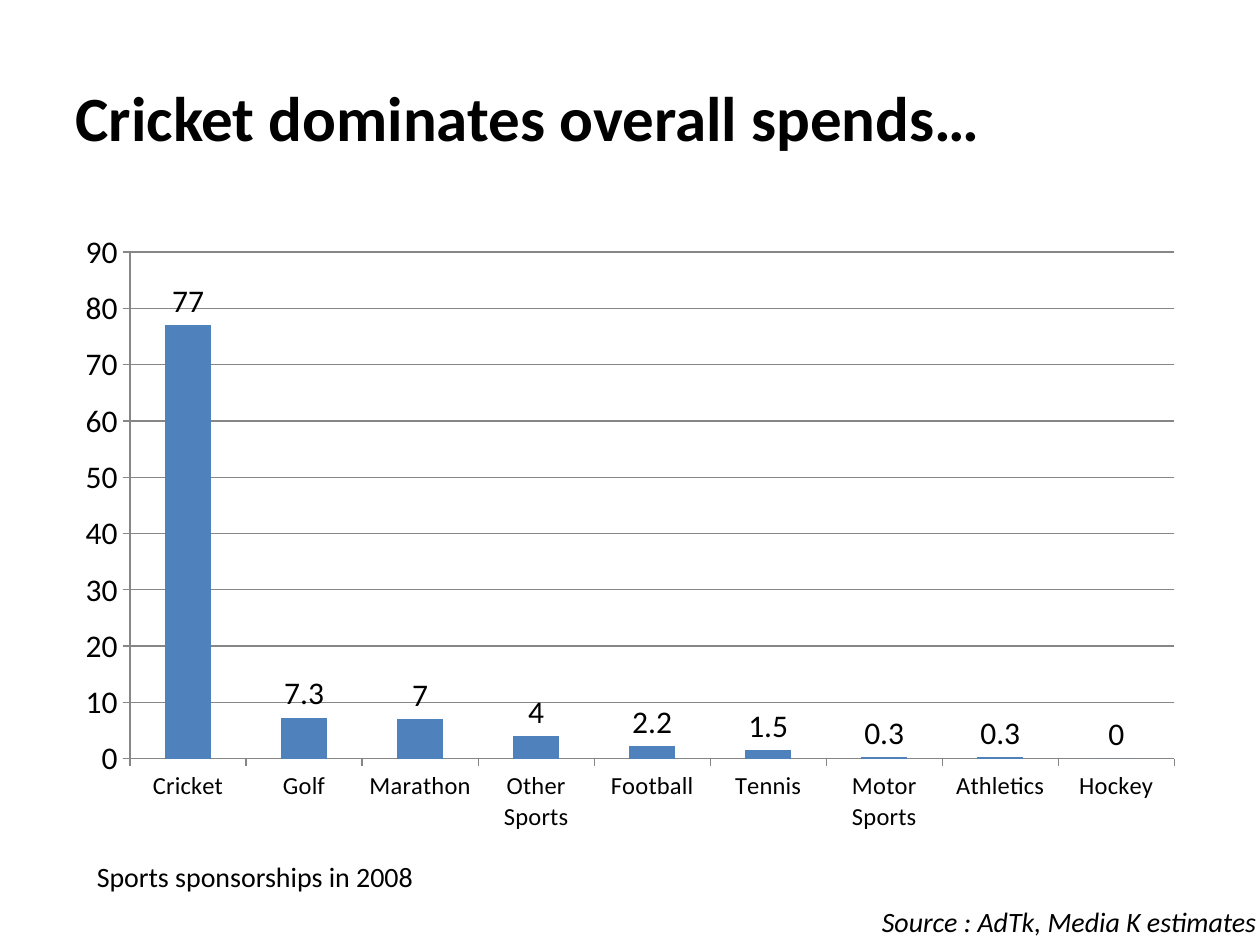
from dataclasses import dataclass

from pptx import Presentation
from pptx.chart.data import CategoryChartData
from pptx.dml.color import RGBColor
from pptx.enum.chart import XL_CHART_TYPE as ChartType
from pptx.enum.chart import XL_LABEL_POSITION as LabelPosition
from pptx.enum.chart import XL_TICK_MARK as TickMark
from pptx.enum.text import MSO_ANCHOR as Anchor
from pptx.enum.text import PP_ALIGN as Align
from pptx.shapes.base import BaseShape
from pptx.slide import Slide
from pptx.util import Inches, Pt


@dataclass(frozen=True)
class Theme:
    font: str = "Calibri"
    ink: RGBColor = RGBColor(0x00, 0x00, 0x00)
    bar: RGBColor = RGBColor(0x4F, 0x81, 0xBD)
    rule: RGBColor = RGBColor(0x86, 0x86, 0x86)
    title_size: Pt = Pt(36)
    chart_size: Pt = Pt(18)
    category_size: Pt = Pt(14)
    note_size: Pt = Pt(16)


@dataclass(frozen=True)
class Area:
    left: float
    top: float
    width: float
    height: float

    def lengths(self) -> tuple[Inches, ...]:
        return tuple(map(Inches, (self.left, self.top, self.width, self.height)))


@dataclass(frozen=True)
class Caption:
    text: str
    area: Area
    size: Pt
    align: Align = Align.LEFT
    anchor: Anchor = Anchor.MIDDLE
    bold: bool = False
    italic: bool = False


@dataclass(frozen=True)
class Spend:
    sport: str
    share: float


THEME = Theme()
CHART_AREA = Area(0.5, 1.75, 9, 4.95)
TITLE = Caption("Cricket dominates overall spends…", Area(0.5, 0.3, 9, 1.25),
                THEME.title_size, bold=True)
NOTES = [
    Caption("Sports sponsorships in 2008", Area(0.67, 6.33, 9, 1.25), THEME.note_size),
    Caption("Source : AdTk, Media K estimates", Area(6.07, 7.13, 4, 0.37),
            THEME.note_size, align=Align.RIGHT, anchor=Anchor.TOP, italic=True),
]
SPENDS = [
    Spend("Cricket", 77),
    Spend("Golf", 7.3),
    Spend("Marathon", 7),
    Spend("Other Sports", 4),
    Spend("Football", 2.2),
    Spend("Tennis", 1.5),
    Spend("Motor Sports", 0.3),
    Spend("Athletics", 0.3),
    Spend("Hockey", 0),
]


def write_caption(box: BaseShape, caption: Caption) -> None:
    box.left, box.top, box.width, box.height = caption.area.lengths()
    frame = box.text_frame
    frame.word_wrap = True
    frame.vertical_anchor = caption.anchor
    para = frame.paragraphs[0]
    para.text = caption.text
    para.alignment = caption.align
    font = para.font
    font.name = THEME.font
    font.size = caption.size
    font.bold = caption.bold
    font.italic = caption.italic
    font.color.rgb = THEME.ink


def add_spend_chart(page: Slide, spends: list[Spend]) -> None:
    data = CategoryChartData()
    data.categories = [spend.sport for spend in spends]
    data.add_series("Series 1", [spend.share for spend in spends])
    chart = page.shapes.add_chart(
        ChartType.COLUMN_CLUSTERED, *CHART_AREA.lengths(), data).chart
    chart.has_title = False
    chart.has_legend = False
    chart.font.name = THEME.font
    chart.font.size = THEME.chart_size
    chart.font.color.rgb = THEME.ink

    plot = chart.plots[0]
    plot.gap_width = 150
    plot.vary_by_categories = False
    fill = plot.series[0].format.fill
    fill.solid()
    fill.fore_color.rgb = THEME.bar
    plot.has_data_labels = True
    plot.data_labels.show_value = True
    plot.data_labels.position = LabelPosition.OUTSIDE_END

    values, sports = chart.value_axis, chart.category_axis
    values.minimum_scale, values.maximum_scale, values.major_unit = 0, 90, 10
    values.has_major_gridlines = True
    sports.tick_labels.font.size = THEME.category_size
    for axis in (values, sports):
        axis.major_tick_mark = TickMark.OUTSIDE
        axis.minor_tick_mark = TickMark.NONE
    for line in (values.format.line, sports.format.line,
                 values.major_gridlines.format.line):
        line.color.rgb = THEME.rule
        line.width = Pt(0.75)


def main() -> None:
    deck = Presentation()
    deck.slide_width, deck.slide_height = Inches(10), Inches(7.5)
    page = deck.slides.add_slide(deck.slide_layouts.get_by_name("Title Only"))
    write_caption(page.shapes.title, TITLE)
    add_spend_chart(page, SPENDS)
    for note in NOTES:
        write_caption(page.shapes.add_textbox(*note.area.lengths()), note)
    deck.save("out.pptx")


if __name__ == "__main__":
    main()
